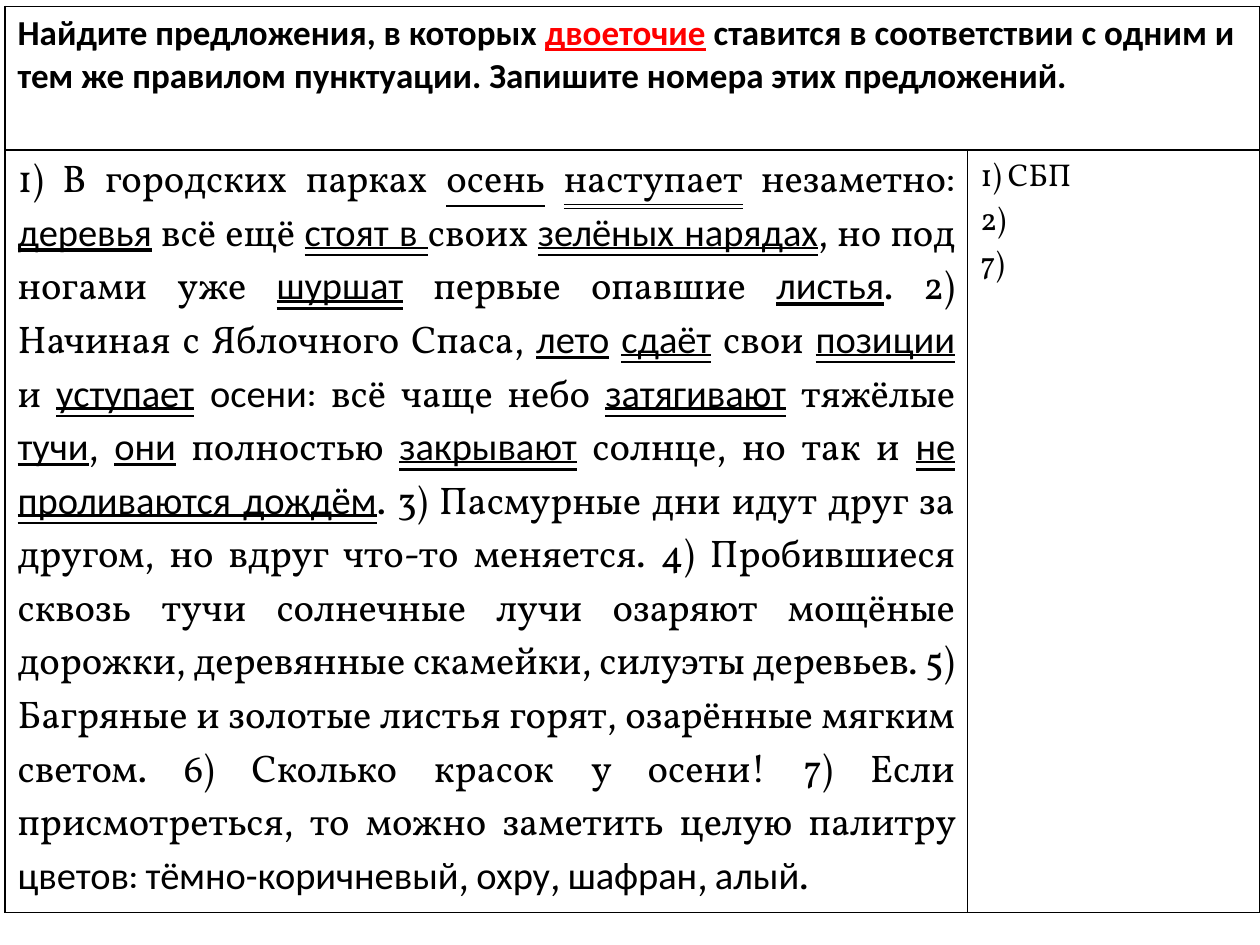
from lxml import etree
from pptx import Presentation
from pptx.dml.color import RGBColor
from pptx.enum import text
from pptx.oxml import ns
from pptx.util import Pt

BLACK = RGBColor(0, 0, 0)
RED = RGBColor(255, 0, 0)
SANS, SERIF = "Calibri", "Vollkorn"
SINGLE = text.MSO_UNDERLINE.SINGLE_LINE
DOUBLE = text.MSO_UNDERLINE.DOUBLE_LINE

# Each piece: wording, font, underline
SENTENCES = [
    ("1) В городских парках ", SERIF, None),
    ("осень", SERIF, SINGLE),
    (" ", SERIF, None),
    ("наступает", SERIF, DOUBLE),
    (" незаметно: ", SERIF, None),
    ("деревья", SANS, SINGLE),
    (" всё ещё ", SERIF, None),
    ("стоят в ", SANS, DOUBLE),
    ("своих ", SERIF, None),
    ("зелёных нарядах", SANS, DOUBLE),
    (", но под ногами уже ", SERIF, None),
    ("шуршат", SANS, DOUBLE),
    (" первые опавшие ", SERIF, None),
    ("листья", SANS, SINGLE),
    (". 2) Начиная с Яблочного Спаса, ", SERIF, None),
    ("лето", SANS, SINGLE),
    (" ", SERIF, None),
    ("сдаёт", SANS, DOUBLE),
    (" свои ", SERIF, None),
    ("позиции", SANS, DOUBLE),
    (" и ", SERIF, None),
    ("уступает", SANS, DOUBLE),
    (" осени", SANS, None),
    (": всё чаще небо ", SERIF, None),
    ("затягивают", SANS, DOUBLE),
    (" тяжёлые ", SERIF, None),
    ("тучи", SANS, SINGLE),
    (", ", SERIF, None),
    ("они", SANS, SINGLE),
    (" полностью ", SERIF, None),
    ("закрывают", SANS, DOUBLE),
    (" солнце, но так и ", SERIF, None),
    ("не проливаются дождём", SANS, DOUBLE),
    (". 3) Пасмурные дни идут друг за другом, но вдруг что-то меняется. "
     "4) Пробившиеся сквозь тучи солнечные лучи озаряют мощёные дорожки, "
     "деревянные скамейки, силуэты деревьев. 5) Багряные и золотые листья "
     "горят, озарённые мягким светом. 6) Сколько красок у осени! 7) Если "
     "присмотреться, то можно заметить целую палитру ", SERIF, None),
    ("цветов", SANS, None),
    (": ", SERIF, None),
    ("тёмно-коричневый", SANS, None),
    (", ", SERIF, None),
    ("охру", SANS, None),
    (", ", SERIF, None),
    ("шафран", SANS, None),
    (", ", SERIF, None),
    ("алый", SANS, None),
    (".", SERIF, None),
]
ANSWERS = ["1) СБП", "2)", "7)"]


def add_run(paragraph, wording, font, size, underline=None, bold=False, color=BLACK):
    run = paragraph.add_run()
    run.text = wording
    run.font.name = font
    run.font.size = Pt(size)
    run.font.bold = bold
    run.font.underline = underline
    run.font.color.rgb = color


def style_cell(cell):
    """Clear the fill and draw a thin black border on all four sides."""
    cell.fill.background()
    properties = cell._tc.get_or_add_tcPr()
    for index, side in enumerate(("lnL", "lnR", "lnT", "lnB")):
        line = etree.Element(ns.qn(f"a:{side}"), w=str(Pt(1)))
        fill = etree.SubElement(line, ns.qn("a:solidFill"))
        etree.SubElement(fill, ns.qn("a:srgbClr"), val=str(BLACK))
        properties.insert(index, line)


def add_grid(slide):
    frame = slide.shapes.add_table(2, 2, Pt(2.9), Pt(3.6), Pt(717.1), Pt(499.7))
    table = frame.table
    table.first_row = table.horz_banding = False
    for column, width in zip(table.columns, (550.1, 167)):
        column.width = Pt(width)
    for row, height in zip(table.rows, (82.1, 417.6)):
        row.height = Pt(height)
    for cell in table.iter_cells():
        style_cell(cell)
    table.cell(0, 0).merge(table.cell(0, 1))
    return table


def fill_task(cell):
    paragraph = cell.text_frame.paragraphs[0]
    for wording, underline, color in (
        ("Найдите предложения, в которых ", None, BLACK),
        ("двоеточие", SINGLE, RED),
        (" ставится в соответствии с одним и тем же правилом пунктуации. "
         "Запишите номера этих предложений.", None, BLACK),
    ):
        add_run(paragraph, wording, SANS, 20, underline, True, color)


def fill_sentences(cell):
    paragraph = cell.text_frame.paragraphs[0]
    paragraph.alignment = text.PP_ALIGN.JUSTIFY
    for wording, font, underline in SENTENCES:
        add_run(paragraph, wording, font, 22, underline)


def fill_answers(cell):
    frame = cell.text_frame
    for index, answer in enumerate(ANSWERS):
        paragraph = frame.add_paragraph() if index else frame.paragraphs[0]
        add_run(paragraph, answer, SERIF, 18)


def main():
    presentation = Presentation()
    presentation.slide_width, presentation.slide_height = Pt(720), Pt(540)
    slide = presentation.slides.add_slide(presentation.slide_layouts[6])

    # Task across the top, sentences on the left, answers on the right
    table = add_grid(slide)
    fill_task(table.cell(0, 0))
    fill_sentences(table.cell(1, 0))
    fill_answers(table.cell(1, 1))

    presentation.save("out.pptx")


if __name__ == "__main__":
    main()
